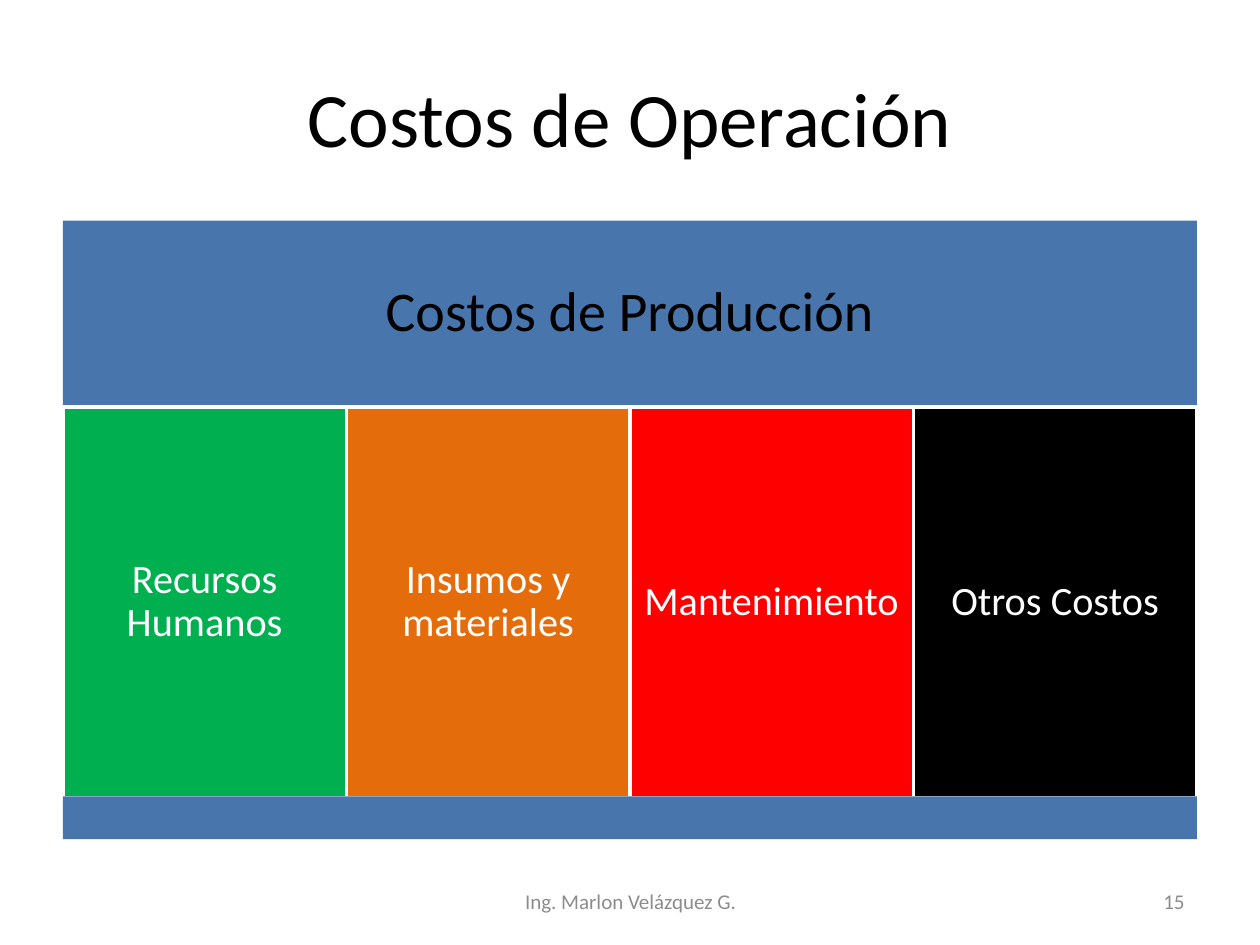
from dataclasses import dataclass

from pptx import Presentation
from pptx.dml.color import RGBColor
from pptx.enum.shapes import MSO_SHAPE
from pptx.enum.text import MSO_ANCHOR, PP_ALIGN
from pptx.util import Inches, Pt


@dataclass(frozen=True)
class Theme:
    font: str = "Calibri"
    black: str = "000000"
    white: str = "FFFFFF"
    gray: str = "8C8C8C"
    blue: str = "4875AC"
    green: str = "00B050"
    orange: str = "E46C0A"
    red: str = "FF0000"
    title_size: int = 44
    band_size: int = 32
    column_size: int = 23
    footer_size: int = 12


THEME = Theme()
LEFT, WIDTH = 0.5, 9
BAND_TOP, BAND_HEIGHT = 1.75, 1.48
COLUMN_TOP, COLUMN_HEIGHT = BAND_TOP + BAND_HEIGHT, 3.1
BASE_TOP, BASE_HEIGHT = 6.32, 0.34
FOOTER_TOP, FOOTER_HEIGHT = 6.95, 0.4

COLUMNS = [
    ("Recursos Humanos", THEME.green),
    ("Insumos y materiales", THEME.orange),
    ("Mantenimiento", THEME.red),
    ("Otros Costos", THEME.black),
]


def write_text(shape, text, size, color, align=PP_ALIGN.CENTER, spacing=None):
    frame = shape.text_frame
    frame.word_wrap = True
    frame.vertical_anchor = MSO_ANCHOR.MIDDLE
    para = frame.paragraphs[0]
    para.alignment = align
    para.line_spacing = spacing
    span = para.add_run()
    span.text = text
    span.font.name = THEME.font
    span.font.size = Pt(size)
    span.font.color.rgb = RGBColor.from_string(color)


def set_insets(shape, inset):
    frame = shape.text_frame
    frame.margin_left = frame.margin_right = Inches(inset)
    frame.margin_top = frame.margin_bottom = Inches(inset)


def add_title(page, text):
    title = page.shapes.title
    title.left, title.top = Inches(LEFT), Inches(0.3)
    title.width, title.height = Inches(WIDTH), Inches(1.25)
    write_text(title, text, THEME.title_size, THEME.black)


def add_block(page, left, top, width, height, fill, outline=None):
    block = page.shapes.add_shape(
        MSO_SHAPE.RECTANGLE, Inches(left), Inches(top), Inches(width), Inches(height)
    )
    block.shadow.inherit = False
    block.fill.solid()
    block.fill.fore_color.rgb = RGBColor.from_string(fill)
    if outline:
        block.line.color.rgb = RGBColor.from_string(outline)
        block.line.width = Pt(2)
    else:
        block.line.fill.background()
    return block


def add_columns(page):
    width = WIDTH / len(COLUMNS)
    for index, (label, fill) in enumerate(COLUMNS):
        column = add_block(page, LEFT + index * width, COLUMN_TOP, width,
                           COLUMN_HEIGHT, fill, THEME.white)
        set_insets(column, 0.1)
        write_text(column, label, THEME.column_size, THEME.white, spacing=0.9)


def add_footer(page, left, width, text, align):
    box = page.shapes.add_textbox(
        Inches(left), Inches(FOOTER_TOP), Inches(width), Inches(FOOTER_HEIGHT)
    )
    write_text(box, text, THEME.footer_size, THEME.gray, align)


def main():
    deck = Presentation()
    deck.slide_width, deck.slide_height = Inches(10), Inches(7.5)
    page = deck.slides.add_slide(deck.slide_layouts.get_by_name("Title Only"))

    add_title(page, "Costos de Operación")
    band = add_block(page, LEFT, BAND_TOP, WIDTH, BAND_HEIGHT, THEME.blue)
    set_insets(band, 0.13)
    write_text(band, "Costos de Producción", THEME.band_size, THEME.black, spacing=0.9)
    add_columns(page)
    add_block(page, LEFT, BASE_TOP, WIDTH, BASE_HEIGHT, THEME.blue)
    add_footer(page, 3.42, 3.17, "Ing. Marlon Velázquez G.", PP_ALIGN.CENTER)
    add_footer(page, 7.17, 2.33, "15", PP_ALIGN.RIGHT)

    deck.save("out.pptx")


if __name__ == "__main__":
    main()
